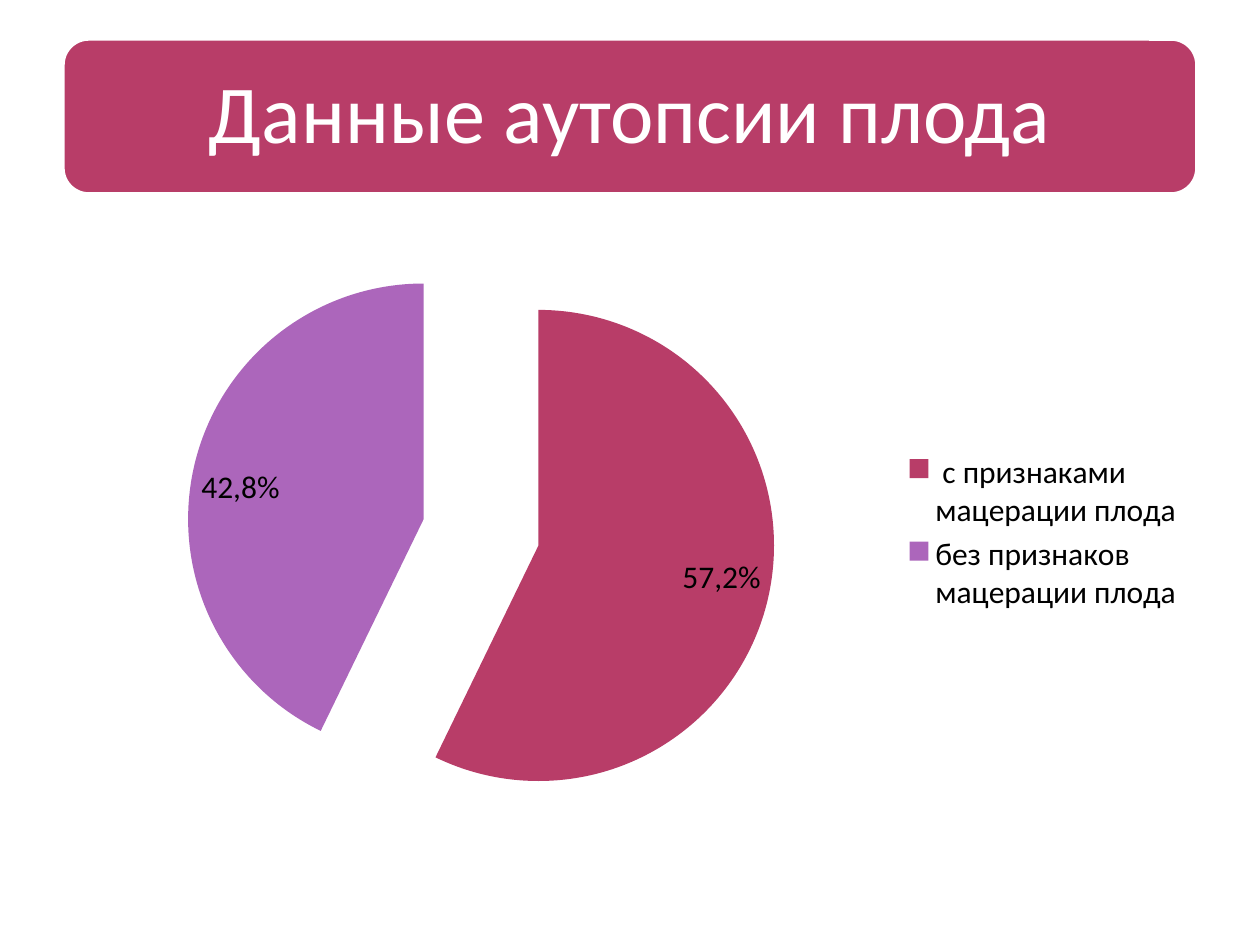
import pptx
import pptx.util
import pptx.chart.data
import pptx.dml.color
import pptx.enum.chart
import pptx.enum.shapes
import pptx.enum.text
import pptx.oxml

Pt = pptx.util.Pt
Inches = pptx.util.Inches


def rgb(name):
    return pptx.dml.color.RGBColor.from_string(theme[name])


theme = {
    "rose": "B83D68", "violet": "AC66BB", "white": "FFFFFF", "black": "000000",
    "font": "Calibri", "title": Pt(47), "body": Pt(18),
}

deck = pptx.Presentation()
deck.slide_width, deck.slide_height = Inches(10), Inches(7.5)
slide = deck.slides.add_slide(deck.slide_layouts[5])
margin = int(deck.slide_width * 0.05)
width = deck.slide_width - 2 * margin

# Banner behind the title
top, height, inset = Inches(0.31), Inches(1.23), Inches(0.06)
banner = slide.shapes.add_shape(
    pptx.enum.shapes.MSO_SHAPE.ROUNDED_RECTANGLE, margin, top, width, height)
banner.shadow.inherit = False
banner.fill.solid()
banner.fill.fore_color.rgb = rgb("rose")
banner.line.color.rgb = rgb("white")
banner.line.width = Pt(2)

# Title
title = slide.shapes.title
title.element.addprevious(banner.element)
title.left, title.top = margin + inset, top + inset
title.width, title.height = width - 2 * inset, height - 2 * inset
frame = title.text_frame
frame.word_wrap = True
frame.auto_size = pptx.enum.text.MSO_AUTO_SIZE.NONE
frame.vertical_anchor = pptx.enum.text.MSO_ANCHOR.MIDDLE
frame.margin_left = frame.margin_right = Inches(0.2)
frame.margin_top = frame.margin_bottom = Inches(0.2)
para = frame.paragraphs[0]
para.alignment = pptx.enum.text.PP_ALIGN.CENTER
para.line_spacing = 0.9
run = para.add_run()
run.text = "Данные аутопсии плода"
run.font.name, run.font.size = theme["font"], theme["title"]
run.font.color.rgb = rgb("white")

# Pie chart
parts = [
    (" с признаками мацерации плода", 0.572, "57,2%", "rose"),
    ("без признаков мацерации плода", 0.428, "42,8%", "violet"),
]
data = pptx.chart.data.CategoryChartData(number_format="0.00%")
data.categories = [part[0] for part in parts]
data.add_series("Series 1", [part[1] for part in parts])
chart = slide.shapes.add_chart(
    pptx.enum.chart.XL_CHART_TYPE.PIE,
    margin, Inches(1.75), width, Inches(4.95), data).chart
chart.has_title = False
chart.font.name, chart.font.size = theme["font"], theme["body"]
chart.font.color.rgb = rgb("black")
chart.has_legend = True
chart.legend.position = pptx.enum.chart.XL_LEGEND_POSITION.RIGHT
chart.legend.include_in_layout = False

# Slices and their labels
plot = chart.plots[0]
plot.vary_by_categories = True
pie = plot.series[0]
inside = pptx.enum.chart.XL_LABEL_POSITION.INSIDE_END
labels = pie.data_labels
labels.show_value = True
labels.number_format, labels.number_format_is_linked = "0.00%", False
labels.position = inside
for i, (name, value, text, color) in enumerate(parts):
    point = pie.points[i]
    point.format.fill.solid()
    point.format.fill.fore_color.rgb = rgb(color)
    label = point.data_label
    run = label.text_frame.paragraphs[0].add_run()
    run.text = text
    run.font.name, run.font.size = theme["font"], theme["body"]
    run.font.color.rgb = rgb("black")
    label.position = inside

# Pull the slices apart
space = "http://schemas.openxmlformats.org/drawingml/2006/chart"
burst = pptx.oxml.parse_xml(f'<c:explosion xmlns:c="{space}" val="25"/>')
pie.points[0].format.fill
pie_xml = plot.series[0].format.fill and chart.element.find(f".//{{{space}}}ser")
pie_xml.find(f"{{{space}}}dPt").addprevious(burst)

deck.save("out.pptx")
